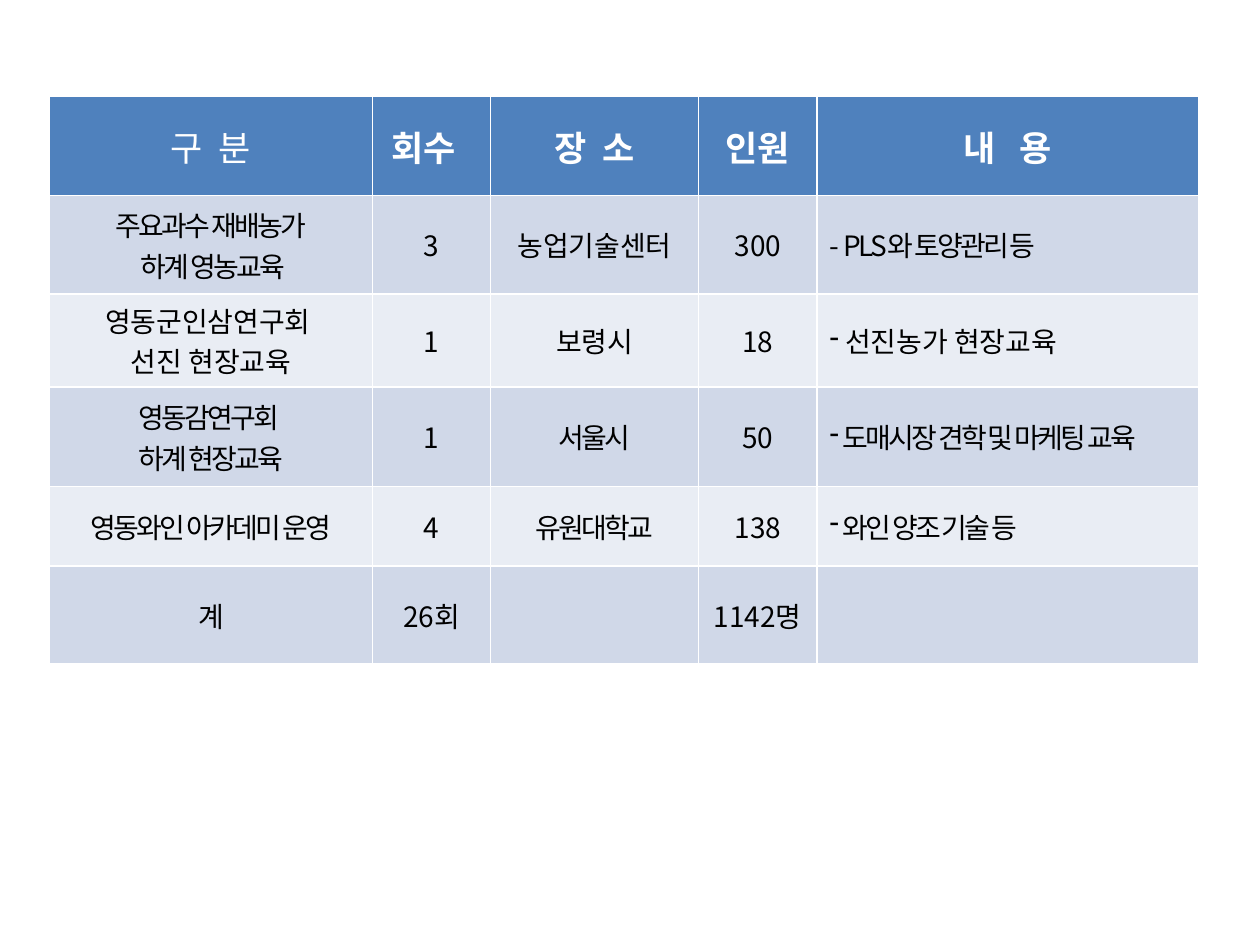
from dataclasses import dataclass

from lxml.etree import SubElement
from pptx import Presentation
from pptx.dml.color import RGBColor
from pptx.enum.text import MSO_ANCHOR, PP_ALIGN
from pptx.oxml.ns import qn
from pptx.util import Inches, Pt

WHITE = RGBColor(0xFF, 0xFF, 0xFF)
BLACK = RGBColor(0x00, 0x00, 0x00)
HEADER_BLUE = RGBColor(0x4F, 0x81, 0xBD)
BAND_DARK = RGBColor(0xD0, 0xD8, 0xE8)
BAND_LIGHT = RGBColor(0xE9, 0xED, 0xF4)

FONT = "Noto Sans CJK KR"
TIGHT_SPACING = -150  # hundredths of a point


@dataclass
class Entry:
    """One table cell; each line of text is a paragraph."""
    text: str = ""
    tight: bool = False
    bullet: bool = False
    bold: bool = False
    align: PP_ALIGN = PP_ALIGN.CENTER


def tight(text):
    return Entry(text, tight=True)


def detail(text, tight=True, bullet=True):
    return Entry(text, tight, bullet, align=PP_ALIGN.LEFT)


def heading(text):
    return Entry(text, bold=True)


HEADER = [Entry("구  분"), heading("회수  "), heading("장  소"),
          heading("인원"), heading("내   용")]
TRAININGS = [
    [tight("주요과수 재배농가\n 하계 영농교육"), Entry("3"), Entry("농업기술센터"),
     Entry("300"), detail("-  PLS와 토양관리 등", bullet=False)],
    [Entry("영동군인삼연구회 \n선진 현장교육"), Entry("1"), Entry("보령시"),
     Entry("18"), detail(" 선진농가 현장교육", tight=False)],
    [tight("영동감연구회 \n하계 현장교육"), Entry("1"), tight("서울시"),
     Entry("50"), detail(" 도매시장 견학 및 마케팅 교육")],
    [tight("영동와인 아카데미 운영"), Entry("4"), tight("유원대학교"),
     Entry("138"), detail(" 와인 양조 기술 등")],
    [tight("계"), Entry("26회"), Entry(), Entry("1142명"), Entry()],
]

# Shares of the slide's width and height, in percent
TABLE_LEFT, TABLE_TOP = 3.95, 10.2
COLUMN_SHARES = [25.6, 9.4, 16.5, 9.4, 30.3]
ROW_SHARES = [10.5, 10.4, 9.5, 10.5, 8.4, 10.4]


class SlideBuilder:
    def __init__(self, width, height):
        self.deck = Presentation()
        self.deck.slide_width, self.deck.slide_height = width, height
        self.page = self.deck.slides.add_slide(self.deck.slide_layouts[6])

    def across(self, percent):
        return round(self.deck.slide_width * percent / 100)

    def down(self, percent):
        return round(self.deck.slide_height * percent / 100)

    def table(self, left, top, columns, rows, entries):
        frame = self.page.shapes.add_table(
            len(rows), len(columns), self.across(left), self.down(top),
            self.across(sum(columns)), self.down(sum(rows)))
        table = frame.table
        for column, share in zip(table.columns, columns):
            column.width = self.across(share)
        for row, share in zip(table.rows, rows):
            row.height = self.down(share)
        for row_index, row_entries in enumerate(entries):
            for cell, entry in zip(table.rows[row_index].cells, row_entries):
                self.fill_cell(cell, entry, row_index)

    def fill_cell(self, cell, entry, row_index):
        is_header = row_index == 0
        band = BAND_DARK if row_index % 2 else BAND_LIGHT
        cell.fill.solid()
        cell.fill.fore_color.rgb = HEADER_BLUE if is_header else band
        cell.vertical_anchor = MSO_ANCHOR.MIDDLE
        cell.text = entry.text
        for para in cell.text_frame.paragraphs:
            para.alignment = entry.align
            if entry.bullet:
                SubElement(para._p.get_or_add_pPr(), qn("a:buChar"), char="-")
            if not para.runs:
                para.font.size = Pt(16)
            for span in para.runs:
                self.style_span(span, entry, is_header)

    def style_span(self, span, entry, is_header):
        font = span.font
        font.size = Pt(20 if is_header else 16)
        font.bold = entry.bold
        font.color.rgb = WHITE if is_header else BLACK
        font.name = FONT
        properties = span._r.get_or_add_rPr()
        SubElement(properties, qn("a:ea"), typeface=FONT)
        if entry.tight:
            properties.set("spc", str(TIGHT_SPACING))


def main():
    builder = SlideBuilder(Inches(10), Inches(7.5))
    builder.table(TABLE_LEFT, TABLE_TOP, COLUMN_SHARES, ROW_SHARES,
                  [HEADER, *TRAININGS])
    builder.deck.save("out.pptx")


if __name__ == "__main__":
    main()
